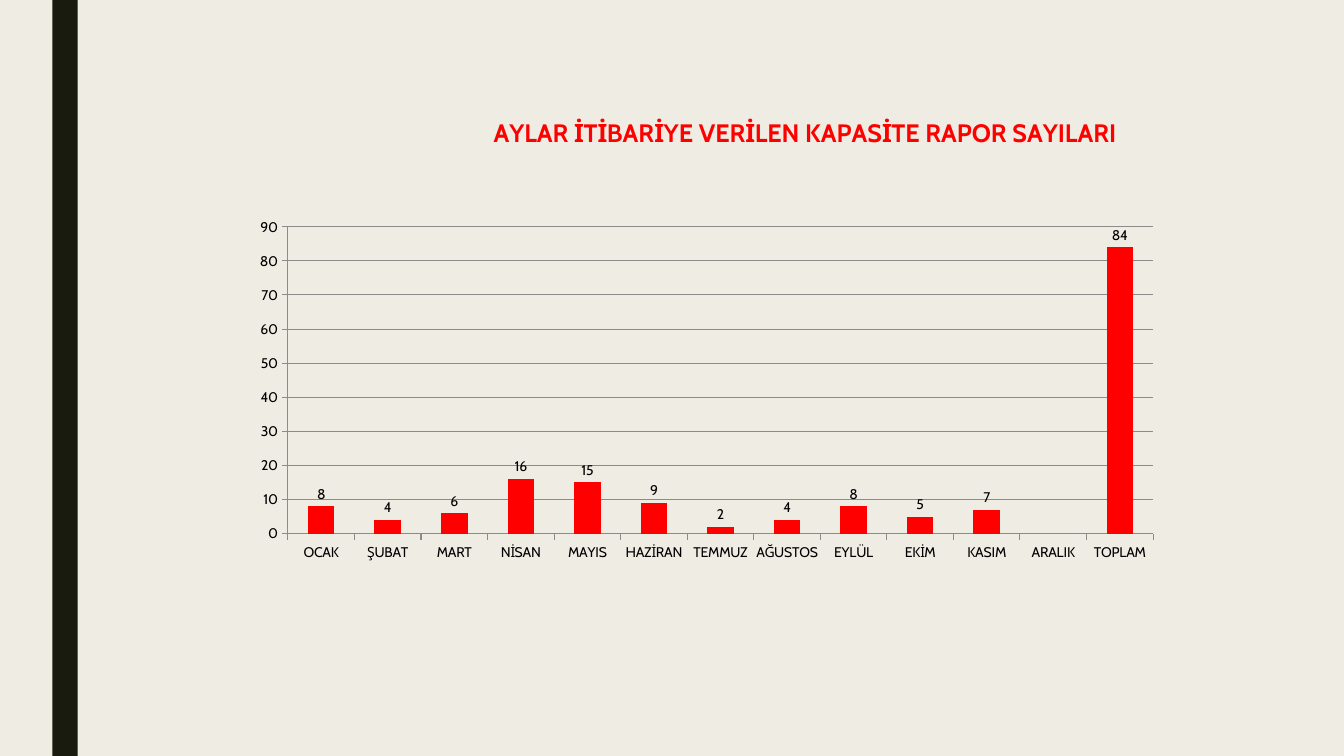
from pptx import Presentation, util as u
from pptx.chart.data import CategoryChartData
from pptx.dml.color import RGBColor
from pptx.enum import chart as ch, shapes
from pptx.oxml import parse_xml
from pptx.oxml.ns import nsdecls, qn

WIDE, HIGH = 13.33, 7.5
FONT = "Cabin"
TITLE = "AYLAR İTİBARİYE VERİLEN KAPASİTE RAPOR SAYILARI"
COUNTS = {
    "OCAK": 8, "ŞUBAT": 4, "MART": 6, "NİSAN": 16, "MAYIS": 15,
    "HAZİRAN": 9, "TEMMUZ": 2, "AĞUSTOS": 4, "EYLÜL": 8, "EKİM": 5,
    "KASIM": 7, "ARALIK": None, "TOPLAM": 84,
}
BAND = (0.52, 0, 0.25, HIGH)
CHART = (2.31, 0.87, 9.41, 5.68)
PLOT = {"x": 0.058, "y": 0.243, "w": 0.912, "h": 0.536}
HEAD = {"x": 0.27, "y": 0.04}


def paint(fill, tint):
    fill.solid()
    fill.fore_color.rgb = RGBColor.from_string(tint)


def style(font, size, tint, bold=False):
    font.name, font.size, font.bold = FONT, u.Pt(size), bold
    font.color.rgb = RGBColor.from_string(tint)


def place(part, spot, index, inner=False):
    for old in part.findall(qn("c:layout")):
        part.remove(old)
    target = '<c:layoutTarget val="inner"/>' if inner else ""
    modes = "".join(f'<c:{k}Mode val="edge"/>' for k in "xy")
    sizes = "".join(f'<c:{k} val="{v}"/>' for k, v in spot.items())
    part.insert(index, parse_xml(
        f'<c:layout {nsdecls("c")}><c:manualLayout>{target}{modes}{sizes}'
        '</c:manualLayout></c:layout>'))


def draw_chart(slide):
    data = CategoryChartData()
    data.categories = list(COUNTS)
    data.add_series("Series 1", list(COUNTS.values()))
    chart = slide.shapes.add_chart(
        ch.XL_CHART_TYPE.COLUMN_CLUSTERED, *map(u.Inches, CHART), data).chart
    style(chart.font, 10, "000000")
    chart.has_legend = False

    chart.has_title = True
    title = chart.chart_title
    title.include_in_layout = False
    title.text_frame.text = TITLE
    style(title.text_frame.paragraphs[0].font, 18, "FF0000", True)
    place(title.element if hasattr(title, "element") else title._element, HEAD, 1)
    place(chart.element.find(".//" + qn("c:plotArea")), PLOT, 0, True)

    plot = chart.plots[0]
    plot.gap_width = 150
    plot.vary_by_categories = False
    bars = plot.series[0]
    bars.invert_if_negative = False
    paint(bars.format.fill, "FF0000")
    labels = bars.data_labels
    labels.show_value = True
    labels.position = ch.XL_LABEL_POSITION.OUTSIDE_END
    style(labels.font, 10, "000000")

    values = chart.value_axis
    values.minimum_scale, values.maximum_scale = 0, 90
    values.major_unit = 10
    values.has_major_gridlines = True
    for line in (values.format.line, values.major_gridlines.format.line,
                 chart.category_axis.format.line):
        paint(line.fill, "8B8B8B")
        line.width = u.Pt(0.75)
    for axis in (values, chart.category_axis):
        axis.major_tick_mark = ch.XL_TICK_MARK.OUTSIDE
        axis.minor_tick_mark = ch.XL_TICK_MARK.NONE


def main():
    deck = Presentation()
    deck.slide_width, deck.slide_height = u.Inches(WIDE), u.Inches(HIGH)
    slide = deck.slides.add_slide(deck.slide_layouts[6])
    paint(slide.background.fill, "EFEDE3")
    band = slide.shapes.add_shape(
        shapes.MSO_SHAPE.RECTANGLE, *map(u.Inches, BAND))
    band.shadow.inherit = False
    paint(band.fill, "191B0E")
    band.line.fill.background()
    draw_chart(slide)
    deck.save("out.pptx")


if __name__ == "__main__":
    main()
